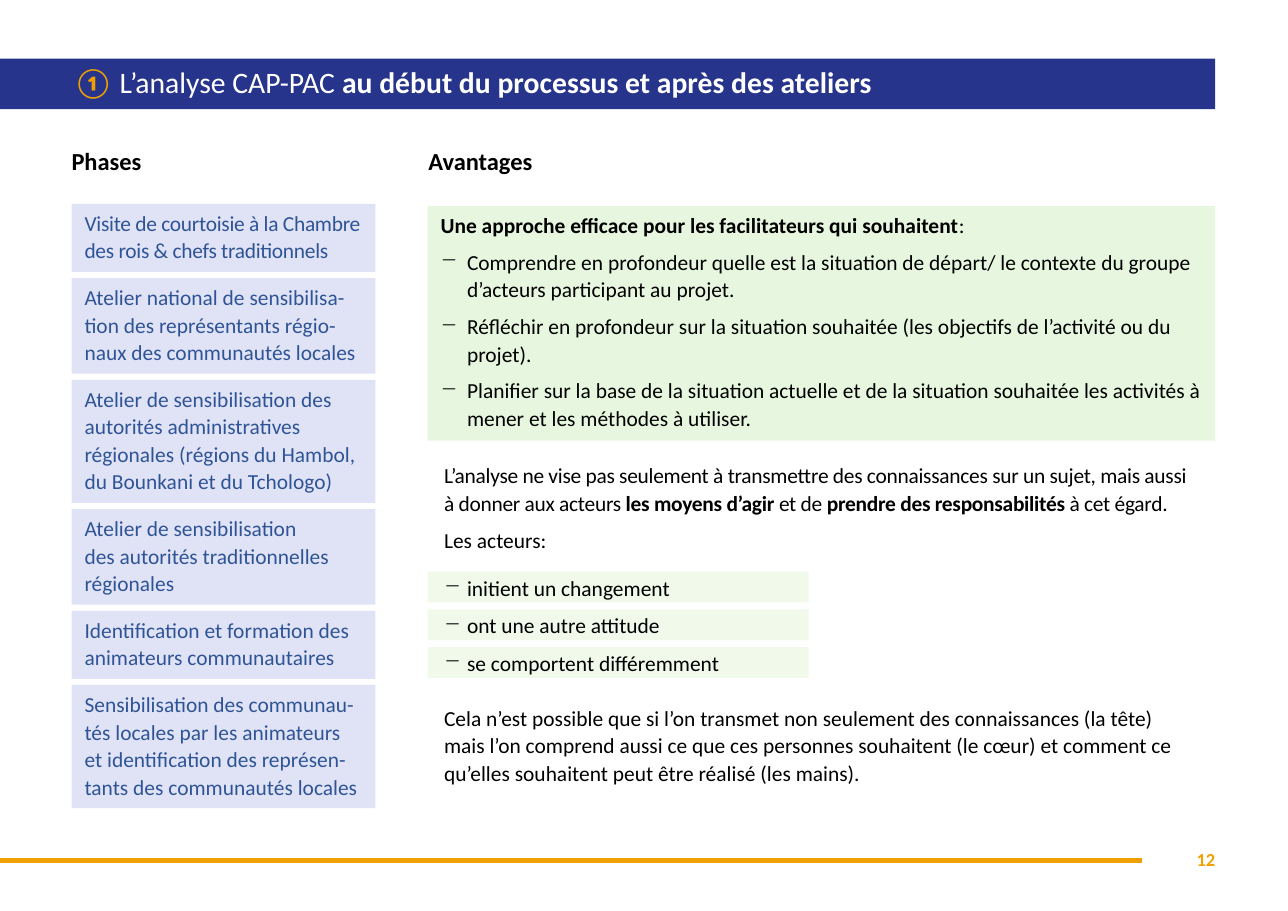
from lxml import etree
from pptx import Presentation
from pptx.dml.color import RGBColor
from pptx.enum.shapes import MSO_CONNECTOR, MSO_SHAPE
from pptx.enum.text import MSO_ANCHOR, PP_ALIGN
from pptx.oxml.ns import qn
from pptx.util import Cm, Pt

RECTANGLE = MSO_SHAPE.RECTANGLE
STRAIGHT = MSO_CONNECTOR.STRAIGHT
TOP, MIDDLE = MSO_ANCHOR.TOP, MSO_ANCHOR.MIDDLE
LEFT, RIGHT = PP_ALIGN.LEFT, PP_ALIGN.RIGHT

FONT = "Calibri"
NAVY, ORANGE, WHITE, BLACK = "27348B", "EEA100", "FFFFFF", "000000"
LILAC, BLUE, GREEN = "E0E3F6", "2F5496", "DEF3D2"
LINE_HEIGHT = Pt(18)
NO_MARGINS = (0, 0, 0, 0)
BOX_MARGINS = (0.3, 0.1, 0.3, 0.2)
RIGHT_COLUMN = 9.86

# Each phase: text, number of lines, character spacing
PHASES = [
    ("Visite de courtoisie à la Chambre des rois & chefs traditionnels", 2, -0.2),
    ("Atelier national de sensibilisa-tion des représentants régio-naux des communautés locales", 3, 0),
    ("Atelier de sensibilisation des autorités administratives régionales "
     "(régions du Hambol, du Bounkani et du Tchologo)", 4, 0),
    ("Atelier de sensibilisation \ndes autorités traditionnelles régionales", 3, 0),
    ("Identification et formation des animateurs communautaires", 2, 0),
    ("Sensibilisation des communau-tés locales par les animateurs "
     "et identification des représen-tants des communautés locales", 4, 0),
]
ADVANTAGES = [
    "Comprendre en profondeur quelle est la situation de départ/ le contexte du groupe "
    "d’acteurs participant au projet.",
    "Réfléchir en profondeur sur la situation souhaitée (les objectifs de l’activité ou du projet).",
    "Planifier sur la base de la situation actuelle et de la situation souhaitée les activités "
    "à mener et les méthodes à utiliser.",
]
CHANGES = ["initient un changement", "ont une autre attitude", "se comportent différemment"]


def colour(value):
    return RGBColor.from_string(value)


def add_box(slide, left, top, width, height, fill, opacity=100):
    shape = slide.shapes.add_shape(RECTANGLE, Cm(left), Cm(top), Cm(width), Cm(height))
    shape.shadow.inherit = False
    shape.fill.solid()
    shape.fill.fore_color.rgb = colour(fill)
    shape.line.fill.background()
    if opacity < 100:
        solid_colour = shape._element.spPr.find(".//" + qn("a:srgbClr"))
        etree.SubElement(solid_colour, qn("a:alpha"), val=str(opacity * 1000))
    return shape


def add_text_box(slide, left, top, width, height):
    return slide.shapes.add_textbox(Cm(left), Cm(top), Cm(width), Cm(height))


def prepare_frame(shape, margins, anchor=TOP):
    frame = shape.text_frame
    frame.word_wrap = True
    frame.vertical_anchor = anchor
    (frame.margin_left, frame.margin_top,
     frame.margin_right, frame.margin_bottom) = [Cm(margin) for margin in margins]
    return frame


def add_paragraph(frame, spacing=LINE_HEIGHT, before=0, after=0, align=LEFT, dash_indent=0):
    first = frame.paragraphs[0]
    paragraph = frame.add_paragraph() if first.runs else first
    if dash_indent:
        properties = paragraph._p.get_or_add_pPr()
        properties.set("marL", str(Cm(dash_indent)))
        properties.set("indent", str(-Cm(dash_indent)))
        etree.SubElement(properties, qn("a:buChar"), char="−")
    paragraph.alignment = align
    paragraph.line_spacing = spacing
    paragraph.space_before = Pt(before)
    paragraph.space_after = Pt(after)
    return paragraph


def add_run(paragraph, text, size=14, text_colour=BLACK, bold=False, tracking=0):
    for index, line in enumerate(text.split("\n")):
        if index:
            paragraph.add_line_break()
        run = paragraph.add_run()
        run.text = line
        run.font.name = FONT
        run.font.size = Pt(size)
        run.font.bold = bold
        run.font.color.rgb = colour(text_colour)
        if tracking:
            run._r.get_or_add_rPr().set("spc", str(round(tracking * 100)))


def add_heading(slide, left, text):
    frame = prepare_frame(add_text_box(slide, left, 3.44, 9.6, 0.7), NO_MARGINS)
    add_run(add_paragraph(frame, spacing=0.9), text, size=16, bold=True)


def add_title(slide):
    bar = add_box(slide, 0, 1.35, 28.02, 1.17, NAVY)
    paragraph = add_paragraph(prepare_frame(bar, (1.7, 0.1, 1, 0.1), MIDDLE), spacing=0.9)
    add_run(paragraph, "① ", 19.4, ORANGE, True, -0.1)
    add_run(paragraph, "L’analyse CAP-PAC ", 19.4, WHITE)
    add_run(paragraph, "au début du processus et après des ateliers", 19.4, WHITE, True)


def add_phases(slide):
    top = 4.7
    for text, lines, tracking in PHASES:
        height = 0.3 + lines * LINE_HEIGHT.cm
        box = add_box(slide, 1.65, top, 7.01, height, LILAC)
        paragraph = add_paragraph(prepare_frame(box, BOX_MARGINS))
        add_run(paragraph, text, text_colour=BLUE, tracking=tracking)
        top += height + 0.14


def add_advantages(slide):
    box = add_box(slide, RIGHT_COLUMN, 4.75, 18.16, 5.41, GREEN, 70)
    frame = prepare_frame(box, BOX_MARGINS)
    paragraph = add_paragraph(frame, after=6)
    add_run(paragraph, "Une approche efficace pour les facilitateurs qui souhaitent", bold=True)
    add_run(paragraph, ":")
    for text in ADVANTAGES:
        add_run(add_paragraph(frame, after=6, dash_indent=0.61), text)


def add_explanation(slide):
    # Pale bands behind the three changes
    for row in range(len(CHANGES)):
        add_box(slide, RIGHT_COLUMN, 13.18 + row * 0.87, 8.79, 0.71, GREEN, 45)

    frame = prepare_frame(add_text_box(slide, 9.91, 10.52, 18.16, 7.67), (0.33, 0.1, 0.33, 0.1))
    paragraph = add_paragraph(frame)
    for text, bold in [
        ("L’analyse ne vise pas seulement à transmettre des connaissances sur un sujet, "
         "mais aussi \nà donner aux acteurs ", False),
        ("les moyens d’agir ", True),
        ("et de ", False),
        ("prendre des responsabilités ", True),
        ("à cet égard.", False),
    ]:
        add_run(paragraph, text, bold=bold, tracking=-0.2)
    add_run(add_paragraph(frame, before=6.5, after=6.5), "Les acteurs:")
    for text in CHANGES:
        add_run(add_paragraph(frame, before=6.5, dash_indent=0.53), text)
    add_run(add_paragraph(frame, before=18),
            "Cela n’est possible que si l’on transmet non seulement des connaissances (la tête) \n"
            "mais l’on comprend aussi ce que ces personnes souhaitent (le cœur) et comment ce "
            "qu’elles souhaitent peut être réalisé (les mains).")


def add_footer(slide):
    line = slide.shapes.add_connector(STRAIGHT, 0, Cm(19.84), Cm(26.34), Cm(19.84))
    line.line.color.rgb = colour(ORANGE)
    line.line.width = Pt(3)
    etree.SubElement(line._element.spPr, qn("a:effectLst"))
    frame = prepare_frame(add_text_box(slide, 26.14, 19.56, 1.88, 0.51), NO_MARGINS)
    add_run(add_paragraph(frame, spacing=1.0, align=RIGHT), "12", 12, ORANGE, True)


def main():
    presentation = Presentation()
    presentation.slide_width, presentation.slide_height = Cm(29.7), Cm(21)
    slide = presentation.slides.add_slide(presentation.slide_layouts[6])

    add_footer(slide)
    add_title(slide)

    # Left column
    add_heading(slide, 1.65, "Phases")
    add_phases(slide)

    # Right column
    add_heading(slide, 9.88, "Avantages")
    add_advantages(slide)
    add_explanation(slide)

    presentation.save("out.pptx")


if __name__ == "__main__":
    main()
